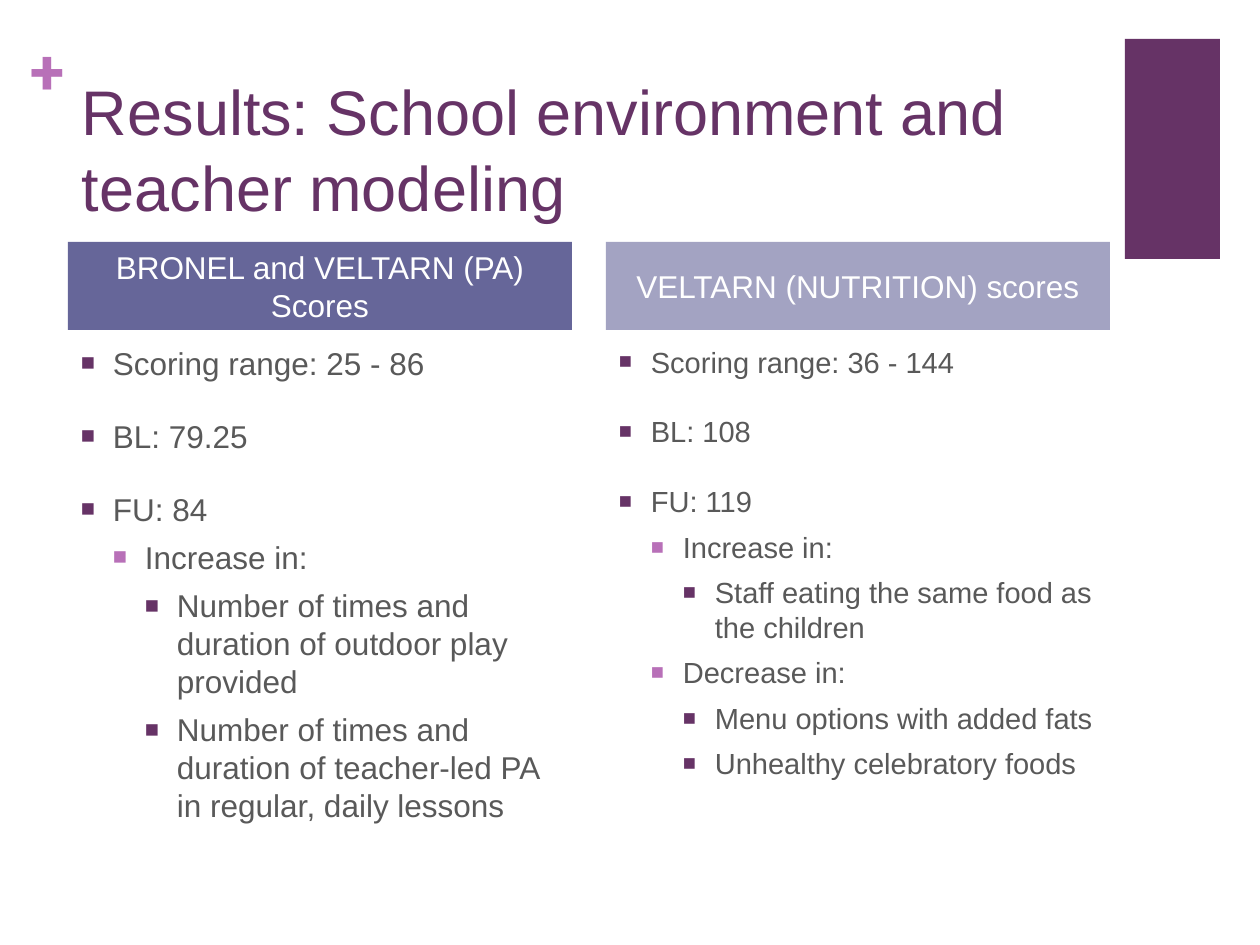
"""Build the slide on school environment and teacher modeling results."""
from dataclasses import dataclass

from lxml import etree
from pptx import Presentation
from pptx.dml.color import RGBColor
from pptx.enum.shapes import MSO_SHAPE
from pptx.enum.text import MSO_ANCHOR, PP_ALIGN
from pptx.oxml.ns import qn
from pptx.util import Pt

RECTANGLE = MSO_SHAPE.RECTANGLE
TOP, MIDDLE = MSO_ANCHOR.TOP, MSO_ANCHOR.MIDDLE
LEFT, CENTER = PP_ALIGN.LEFT, PP_ALIGN.CENTER

TITLE = "Results: School environment and teacher modeling"
COLUMNS = [
    {
        "header": "BRONEL and VELTARN (PA) Scores",
        "fill": "666699",
        "size": 18,
        "items": [
            (0, "Scoring range: 25 - 86"),
            (0, "BL: 79.25"),
            (0, "FU: 84"),
            (1, "Increase in:"),
            (2, "Number of times and duration of outdoor play provided"),
            (2, "Number of times and duration of teacher-led PA in regular, daily lessons"),
        ],
    },
    {
        "header": "VELTARN (NUTRITION) scores",
        "fill": "A3A3C2",
        "size": 16.6,
        "items": [
            (0, "Scoring range: 36 - 144"),
            (0, "BL: 108"),
            (0, "FU: 119"),
            (1, "Increase in:"),
            (2, "Staff eating the same food as the children"),
            (1, "Decrease in:"),
            (2, "Menu options with added fats"),
            (2, "Unhealthy celebratory foods"),
        ],
    },
]


@dataclass(frozen=True)
class Theme:
    font: str = "Arial"
    accent_font: str = "Roboto Slab"
    dark: str = "663366"
    light: str = "B870B8"
    body: str = "595959"
    white: str = "FFFFFF"
    title_size: int = 36
    header_size: int = 18


THEME = Theme()
PX = 914400 // 126
SLIDE_WIDTH, SLIDE_HEIGHT = 1260, 945
COLUMN_LEFT, COLUMN_WIDTH, COLUMN_GAP = 68, 504, 34
HEADER_TOP, HEADER_HEIGHT = 242, 88
BODY_TOP, BODY_HEIGHT = 338, 507
INDENT = 32
SIDE, EDGE = 13, 6
BULLET_COLORS = [THEME.dark, THEME.light, THEME.dark]
SPACE_BEFORE = [20, 6, 6]


def scaled(*lengths):
    return [length * PX for length in lengths]


def apply(target, values):
    for name, value in values.items():
        setattr(target, name, value)


def format_frame(frame, anchor=TOP, side=SIDE, edge=EDGE, wrap=True):
    apply(frame, {
        "word_wrap": wrap,
        "vertical_anchor": anchor,
        "margin_left": side * PX,
        "margin_right": side * PX,
        "margin_top": edge * PX,
        "margin_bottom": edge * PX,
    })


def write(paragraph, text, size, color, font=THEME.font, bold=False, align=LEFT):
    paragraph.alignment = align
    run = paragraph.add_run()
    run.text = text
    apply(run.font, {"name": font, "size": Pt(size), "bold": bold})
    run.font.color.rgb = RGBColor.from_string(color)


def add_text(slide, box, text, color, wrap=True, side=SIDE, edge=EDGE, **style):
    frame = slide.shapes.add_textbox(*scaled(*box)).text_frame
    format_frame(frame, side=side, edge=edge, wrap=wrap)
    write(frame.paragraphs[0], text, THEME.title_size, color, **style)


def add_block(slide, box, fill):
    shape = slide.shapes.add_shape(RECTANGLE, *scaled(*box))
    shape.shadow.inherit = False
    shape.fill.solid()
    shape.fill.fore_color.rgb = RGBColor.from_string(fill)
    shape.line.fill.background()
    return shape


def add_bullet(paragraph, level):
    properties = paragraph._p.get_or_add_pPr()
    properties.set("marL", str((level + 1) * INDENT * PX))
    properties.set("indent", str(-INDENT * PX))
    color = etree.SubElement(properties, qn("a:buClr"))
    etree.SubElement(color, qn("a:srgbClr"), val=BULLET_COLORS[level])
    etree.SubElement(properties, qn("a:buSzPct"), val="75000")
    etree.SubElement(properties, qn("a:buFont"), typeface=THEME.font)
    etree.SubElement(properties, qn("a:buChar"), char="■")


def add_column(slide, index, column):
    left = COLUMN_LEFT + index * (COLUMN_WIDTH + COLUMN_GAP)
    header = add_block(slide, (left, HEADER_TOP, COLUMN_WIDTH, HEADER_HEIGHT), column["fill"])
    format_frame(header.text_frame, anchor=MIDDLE, edge=0)
    write(header.text_frame.paragraphs[0], column["header"], THEME.header_size,
          THEME.white, align=CENTER)

    box = scaled(left, BODY_TOP, COLUMN_WIDTH, BODY_HEIGHT)
    frame = slide.shapes.add_textbox(*box).text_frame
    format_frame(frame)
    for number, (level, text) in enumerate(column["items"]):
        paragraph = frame.add_paragraph() if number else frame.paragraphs[0]
        apply(paragraph, {"level": level, "space_before": Pt(SPACE_BEFORE[level])})
        add_bullet(paragraph, level)
        write(paragraph, text, column["size"], THEME.body)


def main():
    presentation = Presentation()
    apply(presentation, {"slide_width": SLIDE_WIDTH * PX, "slide_height": SLIDE_HEIGHT * PX})
    slide = presentation.slides.add_slide(presentation.slide_layouts[6])
    add_block(slide, (1125, 39, 95, 220), THEME.dark)
    add_text(slide, (31, 32, 37, 77), "+", THEME.light, wrap=False, side=0, edge=0,
             font=THEME.accent_font, bold=True)
    add_text(slide, (69, 67, 1041, 154), TITLE, THEME.dark)
    for index, column in enumerate(COLUMNS):
        add_column(slide, index, column)
    presentation.save("out.pptx")


if __name__ == "__main__":
    main()
